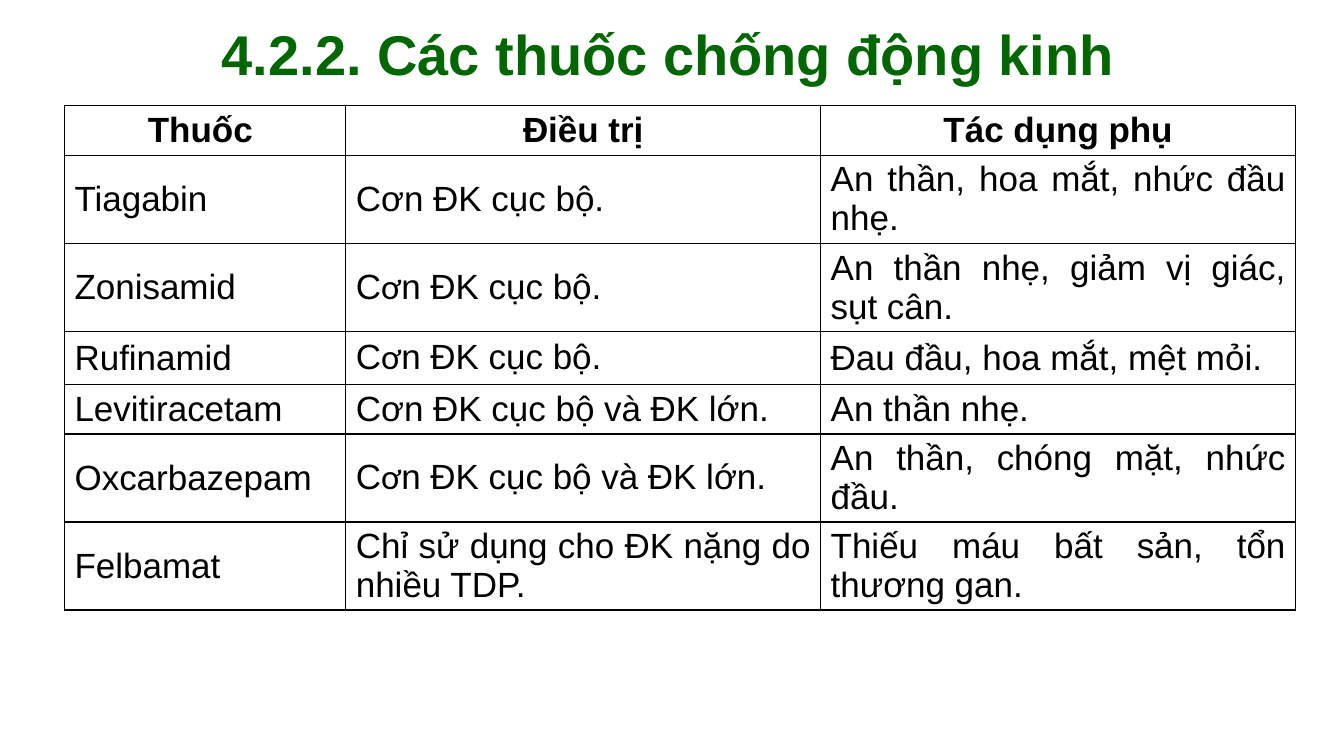
"""Build a slide with a table of antiepileptic drugs."""
from lxml import etree
from pptx import Presentation
from pptx import util as u
from pptx.dml.color import RGBColor
from pptx.enum import text
from pptx.oxml.ns import qn

COLORS = {"title": "006600", "ink": "000000", "paper": "FFFFFF"}
PLAIN_TABLE = "{2D5ABB26-0587-4C30-8999-92F81FD0307C}"
HEADINGS = ["Thuốc ", "Điều trị", "Tác dụng phụ"]
DRUGS = [
    ["Tiagabin", "Cơn ĐK cục bộ.", "An thần, hoa mắt, nhức đầu nhẹ."],
    ["Zonisamid", ("C", "ơ", "n ĐK cục bộ."), "An thần nhẹ, giảm vị giác, sụt cân."],
    ["Rufinamid", ("C", "ơ", "n ĐK cục bộ."), "Đau đầu, hoa mắt, mệt mỏi."],
    ["Levitiracetam", "Cơn ĐK cục bộ và ĐK lớn.", "An thần nhẹ."],
    ["Oxcarbazepam", ("C", "ơ", "n ĐK cục bộ và ĐK lớn."), "An thần, chóng mặt, nhức đầu."],
    ["Felbamat", "Chỉ sử dụng cho ĐK nặng do nhiều TDP.", "Thiếu máu bất sản, tổn thương gan."],
]
COLUMN_SHARES = [20.93, 35.33, 35.33]
SHORT, MIDDLE, TALL = 6.55, 7.01, 11.64
ROW_SHARES = [SHORT, TALL, TALL, MIDDLE, SHORT, TALL, TALL]


def color(name):
    return RGBColor.from_string(COLORS[name])


class DrugSlide:
    """Hold the style and the slide; lengths are percentages of the slide's size."""

    font, accent_font = "Arial", "Calibri"
    title_size, table_size = u.Pt(40), u.Pt(25)

    def __init__(self, presentation):
        self.width, self.height = presentation.slide_width, presentation.slide_height
        self.slide = presentation.slides.add_slide(presentation.slide_layouts[5])

    def across(self, share):
        return round(self.width * share / 100)

    def down(self, share):
        return round(self.height * share / 100)

    def box(self, left, top, width, height):
        return self.across(left), self.down(top), self.across(width), self.down(height)

    def title(self, wording, *place):
        shape = self.slide.shapes.title
        shape.left, shape.top, shape.width, shape.height = self.box(*place)
        shape.fill.solid()
        shape.fill.fore_color.rgb = color("paper")
        shape.line.color.rgb = color("paper")
        shape.line.width = u.Pt(1)
        frame = shape.text_frame
        frame.text = wording
        frame.word_wrap = True
        frame.auto_size = text.MSO_AUTO_SIZE.NONE
        frame.vertical_anchor = text.MSO_ANCHOR.MIDDLE
        paragraph = frame.paragraphs[0]
        paragraph.alignment = text.PP_ALIGN.CENTER
        font = paragraph.font
        font.name, font.size, font.bold = self.font, self.title_size, True
        font.color.rgb = color("title")

    def table(self, rows, left, top, columns, heights):
        place = self.box(left, top, sum(columns), sum(heights))
        frame = self.slide.shapes.add_table(len(rows), len(columns), *place)
        table = frame.table
        table.first_row = table.horz_banding = False
        table._tbl.tblPr.find(qn("a:tableStyleId")).text = PLAIN_TABLE
        for column, share in zip(table.columns, columns):
            column.width = self.across(share)
        for row, share in zip(table.rows, heights):
            row.height = self.down(share)
        for index, (row, wordings) in enumerate(zip(table.rows, rows)):
            for cell, wording in zip(row.cells, wordings):
                self.cell(cell, wording, index == 0)

    def cell(self, cell, wording, heading):
        cell.vertical_anchor = text.MSO_ANCHOR.MIDDLE
        paragraph = cell.text_frame.paragraphs[0]
        paragraph.alignment = text.PP_ALIGN.CENTER if heading else text.PP_ALIGN.JUSTIFY
        pieces = [wording] if isinstance(wording, str) else wording
        for index, piece in enumerate(pieces):
            run = paragraph.add_run()
            run.text = piece
            font = run.font
            font.name = self.accent_font if index == 1 else self.font
            font.size, font.bold = self.table_size, heading
            font.color.rgb = color("ink")
        self.borders(cell)
        cell.fill.background()

    def borders(self, cell):
        properties = cell._tc.get_or_add_tcPr()
        for side in ("lnL", "lnR", "lnT", "lnB"):
            line = etree.SubElement(properties, qn(f"a:{side}"), w=str(u.Pt(1)))
            fill = etree.SubElement(line, qn("a:solidFill"))
            etree.SubElement(fill, qn("a:srgbClr"), val=COLORS["ink"])


def main():
    presentation = Presentation()
    presentation.slide_width, presentation.slide_height = u.Inches(13.33), u.Inches(7.5)
    slide = DrugSlide(presentation)
    slide.title("4.2.2. Các thuốc chống động kinh", 13.13, 0.13, 73.14, 13.87)
    slide.table([HEADINGS] + DRUGS, 4.8, 14, COLUMN_SHARES, ROW_SHARES)
    presentation.save("out.pptx")


if __name__ == "__main__":
    main()
